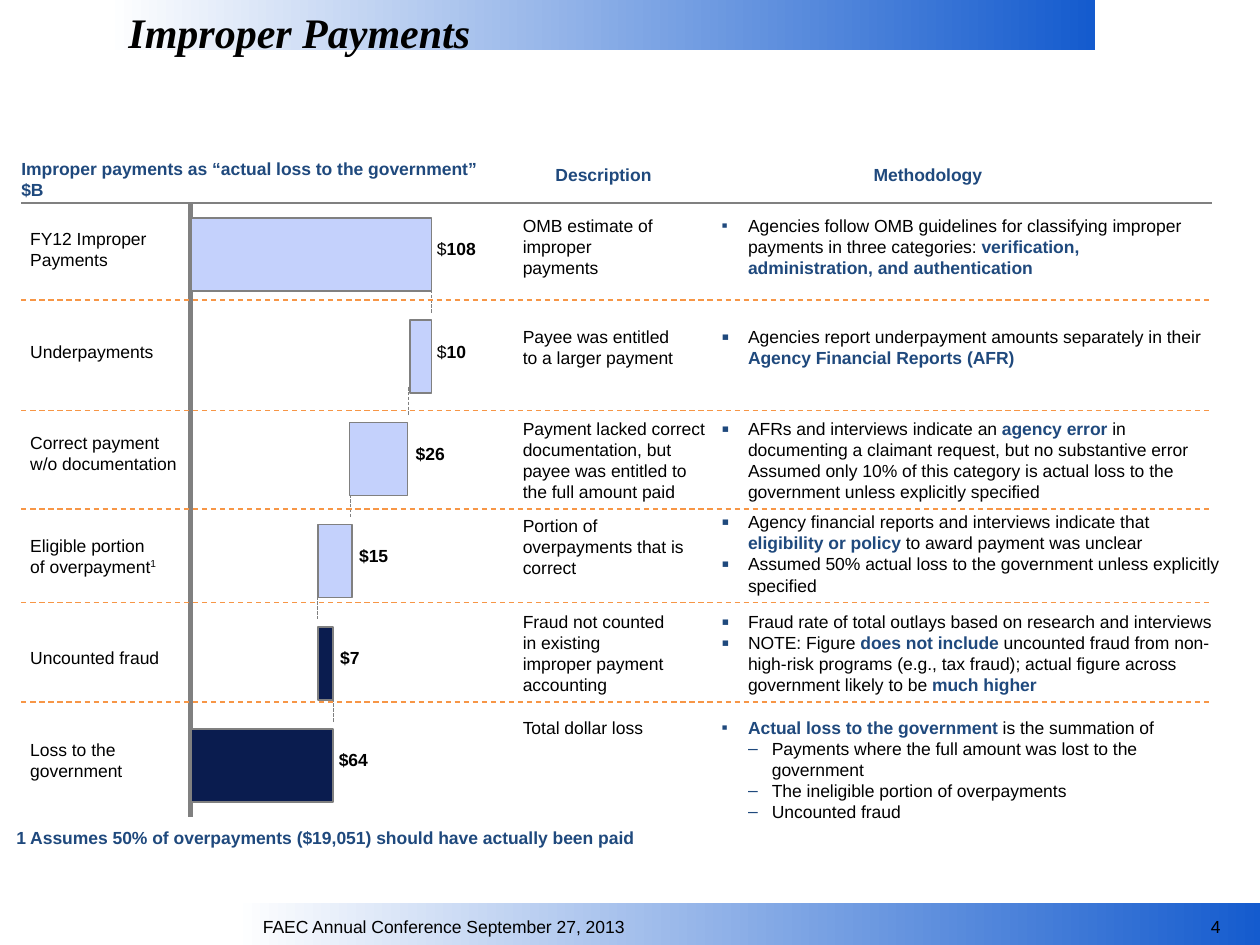
from lxml.etree import SubElement
from pptx import Presentation
from pptx.chart.data import CategoryChartData
from pptx.dml.color import RGBColor
from pptx.enum.chart import XL_CHART_TYPE as ChartType, XL_TICK_LABEL_POSITION as LabelPosition
from pptx.enum.chart import XL_TICK_MARK as TickMark
from pptx.enum.dml import MSO_LINE as Dash
from pptx.enum.shapes import MSO_CONNECTOR as Connector, MSO_SHAPE as Shape
from pptx.enum.text import MSO_ANCHOR as Anchor, PP_ALIGN as Align
from pptx.oxml import parse_xml
from pptx.oxml.ns import nsdecls, qn
from pptx.util import Cm, Pt

BLACK = RGBColor(0, 0, 0)
WHITE = RGBColor(0xFF, 0xFF, 0xFF)
BLUE = RGBColor(0x14, 0x5B, 0xCE)
NAVY = RGBColor(0x1F, 0x49, 0x7D)
GREY = RGBColor(0x80, 0x80, 0x80)
ORANGE = RGBColor(0xF7, 0x96, 0x46)
PALE_BAR = RGBColor(0xC4, 0xD1, 0xFC)
DARK_BAR = RGBColor(0x0A, 0x1C, 0x4F)

TABLE_LEFT, TABLE_RIGHT, HEADER_LINE = 0.43, 24.43, 4.09
DESCRIPTION_LEFT, METHOD_LEFT = 10.54, 14.55
BAR_PITCH, FIRST_BAR_MIDDLE = 2.06, 5.02

BAR_LABELS = [
    ("FY12 Improper\nPayments", "$**108**", 8.76),
    ("Underpayments", "$**10**", 8.76),
    ("Correct payment \nw/o documentation", "**$26**", 8.33),
    ("Eligible portion\nof overpayment^1", "**$15**", 7.19),
    ("Uncounted fraud", "**$7**", 6.81),
    ("Loss to the \ngovernment", "**$64**", 6.78),
]
BAR_LINKS = [8.69, 8.23, 7.06, 6.4, 6.71]

ROWS = [
    (4.34, 2.97, "OMB estimate of improper payments", 4.34, 9.53, 100,
     ["Agencies follow OMB guidelines for classifying improper payments in three categories: "
      "**verification, administration, and authentication**"]),
    (6.58, 3.25, "Payee was entitled to a larger payment", 6.58, 9.88, 125,
     ["Agencies report underpayment amounts separately in their "
      "**Agency Financial Reports (AFR)**"]),
    (8.43, 3.81, "Payment lacked correct documentation, but payee was entitled to the full amount paid",
     8.43, 9.93, 125,
     ["AFRs and interviews indicate an **agency error **in documenting a claimant request, "
      "but no substantive error\nAssumed only 10% of this category is actual loss to the "
      "government unless explicitly specified"]),
    (10.39, 3.25, "Portion of overpayments that is correct", 10.31, 10.13, 125,
     ["Agency financial reports and interviews indicate that **eligibility or policy **"
      "to award payment was unclear",
      "Assumed 50% actual loss to the government unless explicitly specified"]),
    (12.32, 2.97, "Fraud not counted in existing improper payment accounting", 12.32, 9.93, 125,
     ["Fraud rate of total outlays based on research and interviews",
      "NOTE: Figure **does not include **uncounted fraud from non-high-risk programs "
      "(e.g., tax fraud); actual figure across government likely to be **much higher**"]),
    (14.45, 2.97, "Total dollar loss", 14.45, 9.53, 100,
     ["**Actual loss to the government **is the summation of",
      "- Payments where the full amount was lost to the government",
      "- The ineligible portion of overpayments",
      "- Uncounted fraud"]),
]
ROW_LINES = [6.05, 8.28, 10.26, 12.14, 14.15]


def add_bullet(para, char, margin, hang, size):
    props = para._p.get_or_add_pPr()
    props.set("marL", str(Cm(margin)))
    props.set("indent", str(-Cm(hang)))
    color = SubElement(props, qn("a:buClr"))
    SubElement(color, qn("a:srgbClr")).set("val", str(NAVY))
    SubElement(props, qn("a:buSzPct")).set("val", str(size * 1000))
    SubElement(props, qn("a:buFont")).set("typeface", "Arial")
    SubElement(props, qn("a:buChar")).set("char", char)


def add_spans(para, text, strong_color):
    for index, piece in enumerate(text.split("**")):
        for number, line in enumerate(piece.split("\n")):
            if number:
                para.add_line_break()
            body, _, raised = line.partition("^")
            if body:
                span = para.add_run()
                span.text = body
                if index % 2:
                    span.font.bold = True
                    span.font.color.rgb = strong_color
            if raised:
                span = para.add_run()
                span.text = raised
                span._r.get_or_add_rPr().set("baseline", "30000")


def add_text(page, box, lines, color=BLACK, size=10, bold=None, italic=None, font="Arial",
             align=Align.LEFT, anchor=Anchor.TOP, inset=(0, 0), wrap=True,
             strong_color=NAVY, bullet_size=None):
    frame = page.shapes.add_textbox(*map(Cm, box)).text_frame
    frame.word_wrap = wrap
    frame.vertical_anchor = anchor
    frame.margin_left = frame.margin_right = Cm(inset[0])
    frame.margin_top = frame.margin_bottom = Cm(inset[1])
    for index, line in enumerate(lines):
        para = frame.add_paragraph() if index else frame.paragraphs[0]
        para.alignment = align
        if bullet_size and line.startswith("- "):
            add_bullet(para, "‒", 1.01, 0.48, bullet_size)
            line = line[2:]
        elif bullet_size:
            add_bullet(para, "▪", 0.53, 0.53, bullet_size)
        para.font.name = font
        para.font.size = Pt(size)
        para.font.bold = bold
        para.font.italic = italic
        para.font.color.rgb = color
        add_spans(para, line, strong_color)


def add_line(page, start, end, color, width, dash=None):
    line = page.shapes.add_connector(Connector.STRAIGHT, *map(Cm, start + end))
    line.line.color.rgb = color
    line.line.width = Pt(width)
    if dash:
        line.line.dash_style = dash
    SubElement(line._element.spPr, qn("a:effectLst"))


def add_band(page, box):
    band = page.shapes.add_shape(Shape.RECTANGLE, *map(Cm, box))
    band.shadow.inherit = False
    band.line.fill.background()
    band.fill.gradient()
    band.fill.gradient_angle = 0
    for stop, position, color in zip(band.fill.gradient_stops, (0, 1), (WHITE, BLUE)):
        stop.position = position
        stop.color.rgb = color


def add_frame(page):
    add_band(page, (4.72, 18.21, 20.73, 0.84))
    add_band(page, (2.16, 0, 19.91, 1.01))
    add_text(page, (5.05, 18.34, 8.48, 0.74), ["FAEC Annual Conference September 27, 2013"],
             inset=(0.25, 0.13))
    add_text(page, (24.16, 18.34, 0.99, 0.61), ["4"], inset=(0.25, 0.13))
    add_text(page, (2.34, 0, 19.71, 1.27), ["Improper Payments"], size=24, bold=True, italic=True,
             font="Times New Roman", anchor=Anchor.MIDDLE, inset=(0.25, 0.13))


def add_waterfall(page, box):
    data = CategoryChartData()
    data.categories = ["1", "2", "3", "4", "5", "6"]
    data.add_series("Series 1", (None, 91, 66, 53, 53, None))
    data.add_series("Series 2", (100, 9, 24, 14, 6, 59))
    chart = page.shapes.add_chart(ChartType.BAR_STACKED, *map(Cm, box), data).chart
    chart.has_legend = chart.has_title = False
    chart.font.name, chart.font.size, chart.font.bold = "Arial", Pt(12), True
    chart.font.color.rgb = BLACK
    for axis in (chart.category_axis, chart.value_axis):
        axis.major_tick_mark = axis.minor_tick_mark = TickMark.NONE
        axis.tick_label_position = LabelPosition.NONE
        axis.has_major_gridlines = False
    chart.category_axis.reverse_order = True
    chart.category_axis.format.line.color.rgb = GREY
    chart.category_axis.format.line.width = Pt(3)
    chart.value_axis.minimum_scale, chart.value_axis.maximum_scale = 0, 100
    chart.value_axis.format.line.fill.background()
    plot = chart.plots[0]
    plot.gap_width, plot.overlap, plot.vary_by_categories = 40, 100, False
    spacer, bars = plot.series
    spacer.format.fill.background()
    spacer.format.line.fill.background()
    for shown, color in [(bars, PALE_BAR), (bars.points[4], DARK_BAR), (bars.points[5], DARK_BAR)]:
        shown.format.fill.solid()
        shown.format.fill.fore_color.rgb = color
        shown.format.line.color.rgb = GREY
        shown.format.line.width = Pt(1)
    area = chart._chartSpace.chart.plotArea
    for old in area.findall(qn("c:layout")):
        area.remove(old)
    area.insert(0, parse_xml(
        f'<c:layout {nsdecls("c")}><c:manualLayout><c:layoutTarget val="inner"/>'
        '<c:xMode val="edge"/><c:yMode val="edge"/><c:x val="0.05"/><c:y val="0.013"/>'
        '<c:w val="0.92"/><c:h val="0.977"/></c:manualLayout></c:layout>'))


def add_bar_labels(page, left, middle):
    for index, (label, amount, amount_left) in enumerate(BAR_LABELS):
        center = middle + index * BAR_PITCH
        add_text(page, (left, center - 0.42, 3, 0.84), [label], anchor=Anchor.MIDDLE, wrap=False)
        add_text(page, (amount_left, center - 0.21, 1.2, 0.42), [amount], anchor=Anchor.MIDDLE,
                 inset=(0.05, 0), strong_color=BLACK)


def add_bar_links(page, top):
    for index, x in enumerate(BAR_LINKS):
        y = top + index * BAR_PITCH
        add_line(page, (x, y), (x, y + 0.58), GREY, 0.25, Dash.LONG_DASH)


def add_header(page, left, right, bottom):
    add_line(page, (left, bottom), (right, bottom), GREY, 0.75)
    add_text(page, (left, bottom - 0.96, right - left, 0.91),
             ["Improper payments as “actual loss to the government”", "$B"],
             color=NAVY, bold=True, anchor=Anchor.BOTTOM)
    for column, width, title in [(DESCRIPTION_LEFT, 3.25, "Description"),
                                 (METHOD_LEFT, 8.31, "Methodology")]:
        add_text(page, (column, bottom - 0.79, width, 0.43), [title], color=NAVY, bold=True,
                 align=Align.CENTER)


def add_rows(page, left, right):
    for y in ROW_LINES:
        add_line(page, (left, y), (right, y), ORANGE, 0.75, Dash.DASH)
    for top, width, description, method_top, method_width, bullet_size, methods in ROWS:
        add_text(page, (DESCRIPTION_LEFT, top, width, 1.7), [description])
        add_text(page, (METHOD_LEFT, method_top, method_width, 1.7), methods,
                 bullet_size=bullet_size)


def main():
    deck = Presentation()
    deck.slide_width, deck.slide_height = Cm(25.4), Cm(19.05)
    page = deck.slides.add_slide(deck.slide_layouts[6])
    add_frame(page)
    add_bar_links(page, 5.74)
    add_waterfall(page, (3.58, 3.94, 5.28, 12.65))
    add_bar_labels(page, 0.61, FIRST_BAR_MIDDLE)
    add_header(page, TABLE_LEFT, TABLE_RIGHT, HEADER_LINE)
    add_rows(page, TABLE_LEFT, TABLE_RIGHT)
    add_text(page, (0.33, 16.66, 23.75, 0.43),
             ["1 Assumes 50% of overpayments ($19,051) should have actually been paid"],
             color=NAVY, bold=True, anchor=Anchor.BOTTOM)
    deck.save("out.pptx")


if __name__ == "__main__":
    main()
